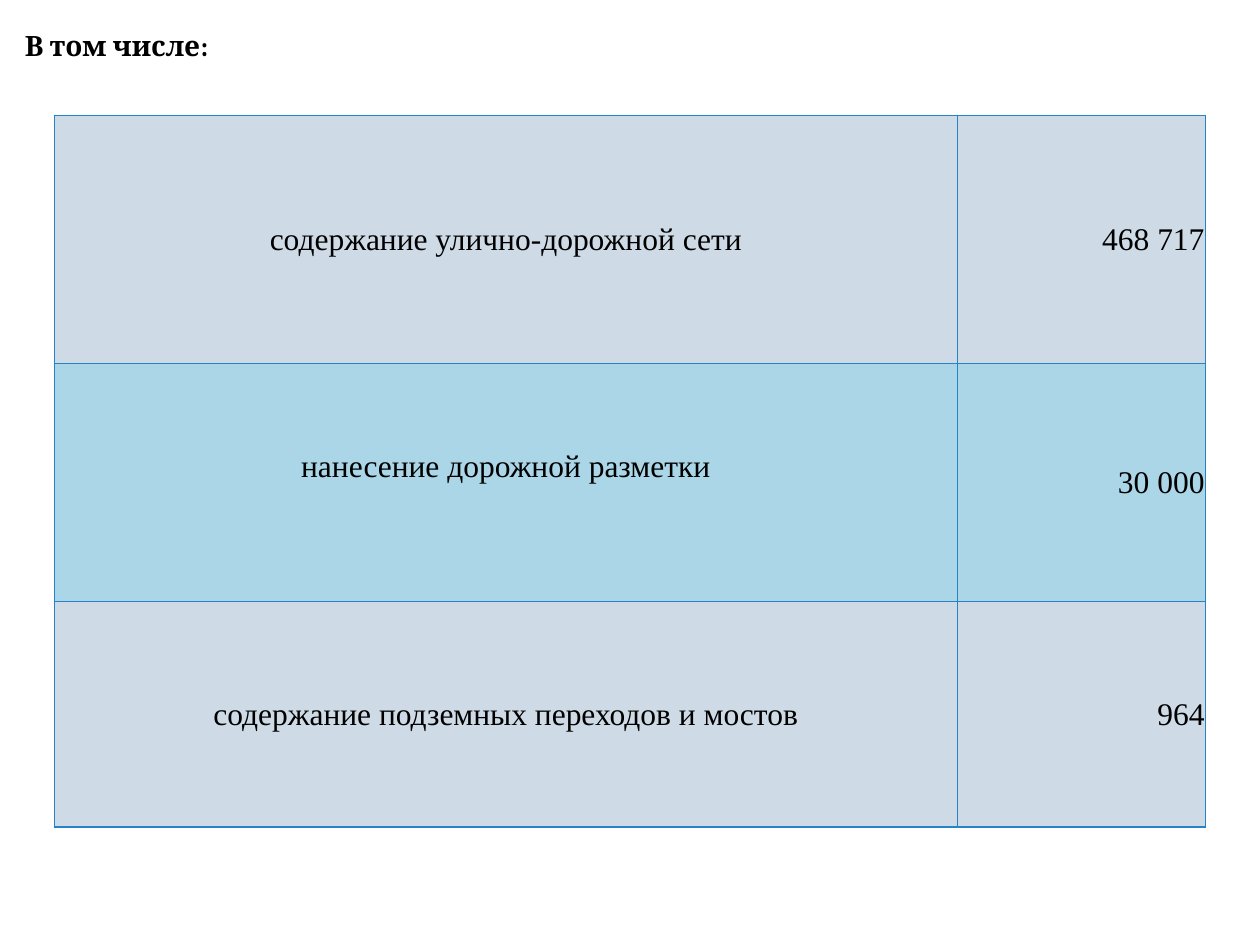
"""Build a slide with a table of road maintenance spending."""
from lxml.etree import SubElement
from pptx import Presentation
from pptx.dml.color import RGBColor
from pptx.enum.text import MSO_ANCHOR, PP_ALIGN
from pptx.oxml.ns import qn
from pptx.util import Pt

HEADING = "В том числе:"
EXPENSES = [
    ("содержание улично-дорожной сети", "468 717"),
    ("нанесение дорожной разметки", "30 000"),
    ("содержание подземных переходов и мостов", "964"),
]
COLORS = {"text": "000000", "border": "2683C6", "odd": "CEDBE6", "even": "AAD6E7"}
COLUMN_WIDTHS = [516.2, 141.8]
ROW_HEIGHTS = [141.7, 136, 128.9]
ALIGNMENTS = [PP_ALIGN.CENTER, PP_ALIGN.RIGHT]
RAISED_LABEL, RAISED_BY = (1, 0), 19


def add_text(paragraph, text, font, size, bold=False):
    run = paragraph.add_run()
    run.text = text
    run.font.name = font
    run.font.size = Pt(size)
    run.font.bold = bold
    run.font.color.rgb = RGBColor.from_string(COLORS["text"])


def add_borders(cell):
    properties = cell._tc.get_or_add_tcPr()
    for position, side in enumerate(("lnL", "lnR", "lnT", "lnB")):
        line = properties.makeelement(qn(f"a:{side}"), {"w": str(Pt(1))})
        fill = SubElement(line, qn("a:solidFill"))
        SubElement(fill, qn("a:srgbClr"), val=COLORS["border"])
        properties.insert(position, line)


def add_heading(slide):
    heading = slide.shapes.add_textbox(Pt(0), Pt(15), Pt(720), Pt(40)).text_frame
    heading.word_wrap = True
    heading.margin_left = Pt(14.2)
    heading.paragraphs[0].line_spacing = 0.9
    add_text(heading.paragraphs[0], HEADING, "Cambria", 16, True)


def add_expenses(slide):
    table = slide.shapes.add_table(
        len(EXPENSES), len(COLUMN_WIDTHS), Pt(31), Pt(66),
        Pt(sum(COLUMN_WIDTHS)), Pt(sum(ROW_HEIGHTS)),
    ).table
    table.first_row = False
    for column, width in zip(table.columns, COLUMN_WIDTHS):
        column.width = Pt(width)
    for r, (expense, height) in enumerate(zip(EXPENSES, ROW_HEIGHTS)):
        table.rows[r].height = Pt(height)
        for c, (text, alignment) in enumerate(zip(expense, ALIGNMENTS)):
            cell = table.cell(r, c)
            cell.margin_left = cell.margin_right = cell.margin_top = Pt(0.7)
            cell.margin_bottom = Pt(RAISED_BY if (r, c) == RAISED_LABEL else 0)
            cell.vertical_anchor = MSO_ANCHOR.MIDDLE
            cell.fill.solid()
            cell.fill.fore_color.rgb = RGBColor.from_string(COLORS["even" if r % 2 else "odd"])
            add_borders(cell)
            paragraph = cell.text_frame.paragraphs[0]
            paragraph.alignment = alignment
            add_text(paragraph, text, "Times New Roman", 18)


def main():
    presentation = Presentation()
    presentation.slide_width, presentation.slide_height = Pt(720), Pt(540)
    slide = presentation.slides.add_slide(presentation.slide_layouts[6])
    add_heading(slide)
    add_expenses(slide)
    presentation.save("out.pptx")


if __name__ == "__main__":
    main()
